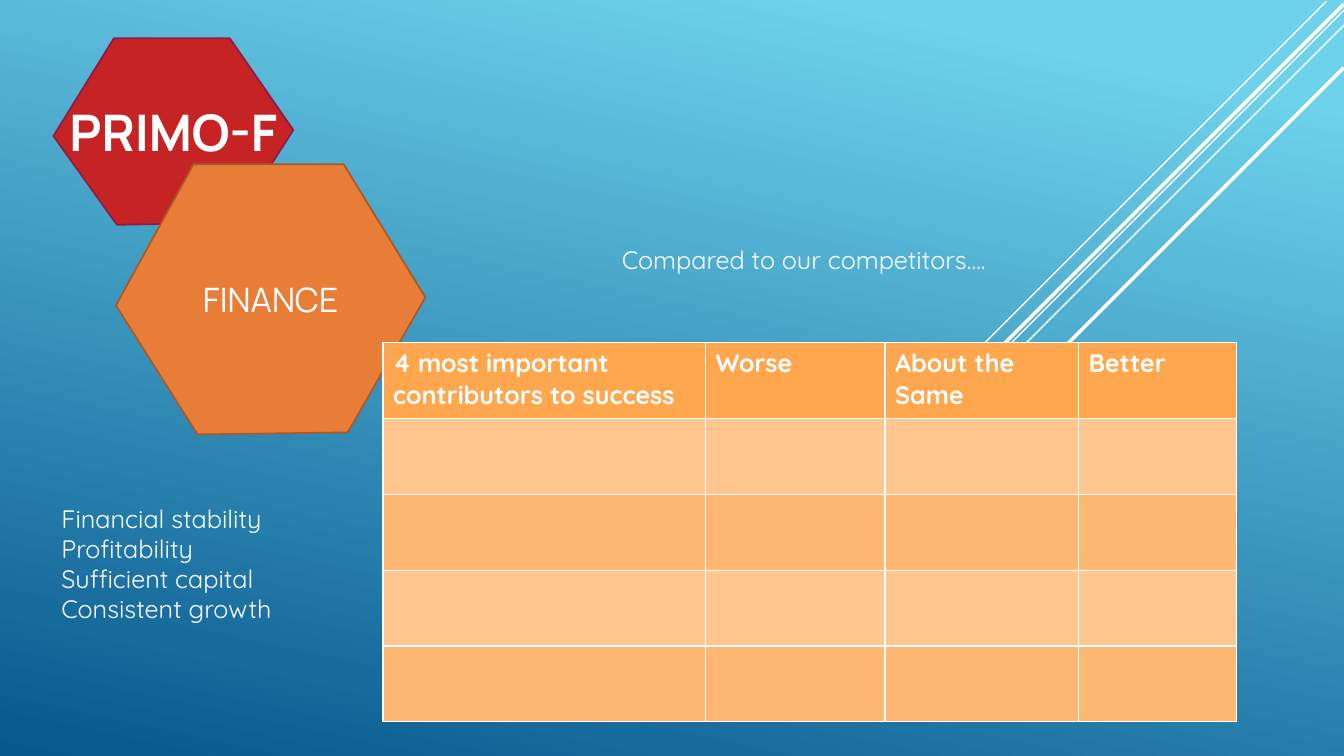
from lxml.etree import SubElement
from pptx import Presentation
from pptx.dml.color import RGBColor
from pptx.enum.shapes import MSO_CONNECTOR as Link
from pptx.enum.text import MSO_ANCHOR as Anchor, PP_ALIGN as Align
from pptx.oxml.ns import qn
from pptx.util import Inches, Pt

# Grid of square cells, a tenth of an inch each
CELL = Inches(0.1)
COLS, ROWS = 133.33, 75

WHITE = RGBColor(0xFF, 0xFF, 0xFF)
SKY = RGBColor(0x6E, 0xD2, 0xEB)
NAVY = RGBColor(0x06, 0x58, 0x8E)
RED = RGBColor(0xC6, 0x23, 0x24)
WINE = RGBColor(0x92, 0x1A, 0x46)
ORANGE = RGBColor(0xE8, 0x7D, 0x37)
RUST = RGBColor(0xAC, 0x59, 0x29)
HEAD = RGBColor(0xFF, 0xA7, 0x4F)
BANDS = RGBColor(0xFF, 0xC7, 0x8F), RGBColor(0xFF, 0xB8, 0x71)

TITLE, BODY = "Manrope", "Quicksand"

# Each ray falls at 45 degrees: start column, start row, drop, weight
RAYS = [
    (131.6, 0.1, 41.6, 1),
    (COLS, 1, 66.5, 1),
    (COLS, 2.5, 54.2, 1),
    (COLS, 0.4, 53, 2.5),
    (COLS, 6.7, 47.5, 2.5),
]
PRIMO = [(11.3, 3.8), (22.8, 3.8), (29.1, 12.9),
         (23.2, 22.1), (11.6, 22.3), (5.3, 13.5)]
FINANCE = [(19.2, 16.3), (34.1, 16.3), (42.2, 29.5),
           (34.5, 42.9), (19.6, 43.1), (11.5, 30.3)]
HEADS = ["4 most important contributors to success",
         "Worse", "About the Same", "Better"]
WIDTHS = [32, 17.8, 19.2, 15.7]
POINTS = ["Financial stability", "Profitability",
          "Sufficient capital", "Consistent growth"]


def grid(*cells):
    return [round(n * CELL) for n in cells]


def write(para, text, size, face, bold=False):
    run = para.add_run()
    run.text = text
    font = run.font
    font.size, font.name, font.bold = Pt(size), face, bold
    font.color.rgb = WHITE


def paint(slide):
    fill = slide.background.fill
    fill.gradient()
    fill.gradient_angle = 258
    for stop, place, color in zip(fill.gradient_stops, (0.1, 1), (SKY, NAVY)):
        stop.position = place
        stop.color.rgb = color


def ray(slide, col, row, drop, weight):
    ends = grid(col, row, col - drop, row + drop)
    line = slide.shapes.add_connector(Link.STRAIGHT, *ends)
    line.line.color.rgb = WHITE
    line.line.width = Pt(weight)
    SubElement(line._element.spPr, qn("a:effectLst"))


def hexagon(slide, corners, fill, edge, text, size, bold=False):
    first, *rest = [grid(*corner) for corner in corners]
    pen = slide.shapes.build_freeform(*first)
    pen.add_line_segments(rest, close=True)
    shape = pen.convert_to_shape()
    shape.shadow.inherit = False
    shape.fill.solid()
    shape.fill.fore_color.rgb = fill
    shape.line.color.rgb = edge
    shape.line.width = Pt(1.25)
    frame = shape.text_frame
    frame.word_wrap = False
    frame.vertical_anchor = Anchor.MIDDLE
    para = frame.paragraphs[0]
    para.alignment = Align.CENTER
    write(para, text, size, TITLE, bold)


def border(cell):
    props = cell._tc.get_or_add_tcPr()
    for side in ("lnL", "lnR", "lnT", "lnB"):
        line = SubElement(props, qn(f"a:{side}"), w=str(Pt(1)))
        solid = SubElement(line, qn("a:solidFill"))
        SubElement(solid, qn("a:srgbClr"), val=str(WHITE))


def chart(slide, left, top, height, count):
    box = grid(left, top, sum(WIDTHS), height)
    table = slide.shapes.add_table(count, len(HEADS), *box).table
    for col, width in zip(table.columns, grid(*WIDTHS)):
        col.width = width
    for r in range(count):
        for c, head in enumerate(HEADS):
            cell = table.cell(r, c)
            border(cell)
            cell.fill.solid()
            cell.fill.fore_color.rgb = BANDS[(r - 1) % 2] if r else HEAD
            if r == 0:
                write(cell.text_frame.paragraphs[0], head, 18, BODY, True)


def label(slide, box, lines):
    frame = slide.shapes.add_textbox(*grid(*box)).text_frame
    frame.word_wrap = True
    for i, text in enumerate(lines):
        para = frame.add_paragraph() if i else frame.paragraphs[0]
        write(para, text, 18, BODY)


def main():
    deck = Presentation()
    deck.slide_width, deck.slide_height = grid(COLS, ROWS)
    slide = deck.slides.add_slide(deck.slide_layouts[6])

    # Backdrop
    paint(slide)
    for spec_row in RAYS:
        ray(slide, *spec_row)

    # Headings
    hexagon(slide, PRIMO, RED, WINE, "PRIMO-F", 36, True)
    hexagon(slide, FINANCE, ORANGE, RUST, "FINANCE", 24)

    # Comparison table and its notes
    chart(slide, 38, 34, 37.6, 5)
    label(slide, (5.1, 49.4, 66.7, 19.2), POINTS)
    label(slide, (60.7, 23.7, 60.7, 7.1), ["Compared to our competitors…."])

    deck.save("out.pptx")


if __name__ == "__main__":
    main()
